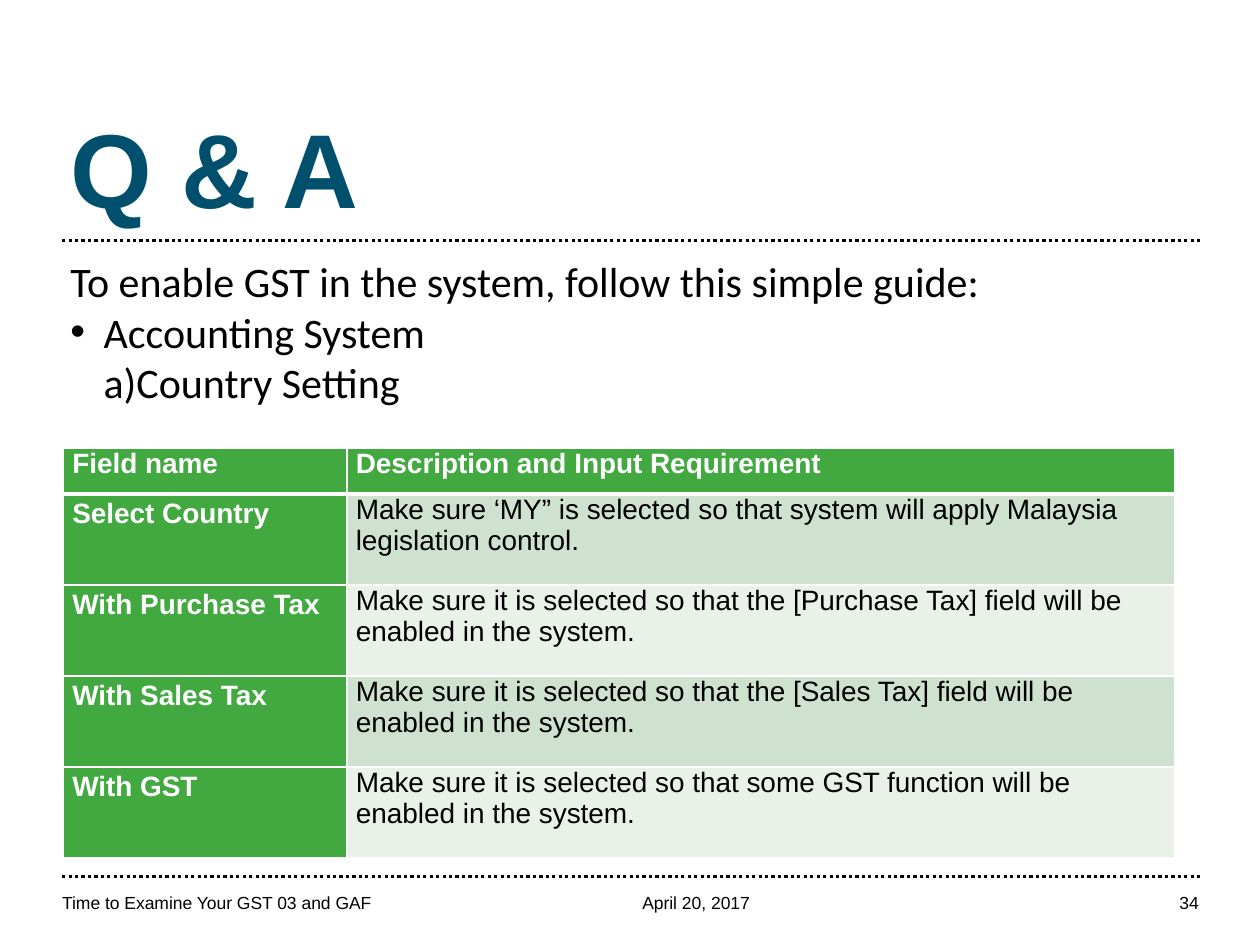
"""Build the Q & A slide on enabling GST in the accounting system."""
from lxml import etree
from pptx import Presentation
from pptx.dml.color import RGBColor
from pptx.enum.dml import MSO_LINE
from pptx.enum.shapes import MSO_CONNECTOR
from pptx.enum.text import MSO_ANCHOR, MSO_AUTO_SIZE, PP_ALIGN
from pptx.oxml import parse_xml
from pptx.oxml.ns import nsdecls, qn
from pptx.util import Pt

LEFT, RIGHT, JUSTIFY = PP_ALIGN.LEFT, PP_ALIGN.RIGHT, PP_ALIGN.JUSTIFY
TOP, BOTTOM = MSO_ANCHOR.TOP, MSO_ANCHOR.BOTTOM
STRAIGHT, DOTTED = MSO_CONNECTOR.STRAIGHT, MSO_LINE.ROUND_DOT
NO_AUTOFIT = MSO_AUTO_SIZE.NONE


def color(hex_code):
    return RGBColor.from_string(hex_code)


def style(paragraph, font_name, size, hex_code, bold=False):
    for run in paragraph.runs:
        run.font.name = font_name
        run.font.size = Pt(size)
        run.font.bold = bold
        run.font.color.rgb = color(hex_code)


prs = Presentation()
prs.slide_width, prs.slide_height = Pt(720), Pt(540)
slide = prs.slides.add_slide(prs.slide_layouts[1])

for y in (137.5, 501):
    rule = slide.shapes.add_connector(STRAIGHT, Pt(35.5), Pt(y), Pt(686), Pt(y))
    rule.line.color.rgb = color("000000")
    rule.line.width = Pt(1.85)
    rule.line.dash_style = DOTTED
    etree.SubElement(rule._element.spPr, qn("a:effectLst"))

title = slide.shapes.title
title.left, title.top, title.width, title.height = Pt(33), Pt(55.5), Pt(197), Pt(80)
title.text_frame.text = "Q & A"
title.text_frame.auto_size = NO_AUTOFIT
title.text_frame.vertical_anchor = TOP
title.text_frame.paragraphs[0].alignment = LEFT
style(title.text_frame.paragraphs[0], "Arial", 60, "00506D", True)

guide = slide.placeholders[1]
guide.left, guide.top, guide.width, guide.height = Pt(33), Pt(142.5), Pt(635), Pt(117)
guide.text_frame.auto_size = NO_AUTOFIT
guide.text_frame.text = (
    "To enable GST in the system, follow this simple guide:\n"
    "Accounting System\n"
    "Country Setting"
)
guide_formats = [
    (0, 0, 0, "<a:buNone {}/>"),
    (0, 19, -19, '<a:buChar {} char="•"/>'),
    (1, 19, 0, '<a:buAutoNum {} type="alphaLcParenR"/>'),
]
for paragraph, (level, margin, indent, bullet) in zip(guide.text_frame.paragraphs, guide_formats):
    paragraph.level = level
    paragraph.alignment = JUSTIFY
    paragraph.space_before = Pt(0)
    properties = paragraph._p.get_or_add_pPr()
    properties.set("marL", str(Pt(margin)))
    properties.set("indent", str(Pt(indent)))
    properties.append(parse_xml(bullet.format(nsdecls("a"))))
    style(paragraph, "Calibri", 24, "000000")

settings = [
    ("Field name", "Description and Input Requirement"),
    ("Select Country", "Make sure ‘MY” is selected so that system will apply Malaysia legislation control."),
    ("With Purchase Tax", "Make sure it is selected so that the [Purchase Tax] field will be enabled in the system."),
    ("With Sales Tax", "Make sure it is selected so that the [Sales Tax] field will be enabled in the system."),
    ("With GST", "Make sure it is selected so that some GST function will be enabled in the system."),
]
table = slide.shapes.add_table(len(settings), 2, Pt(36.3), Pt(256.3), Pt(635), Pt(234)).table
table.columns[0].width, table.columns[1].width = Pt(162), Pt(473)
for r, setting in enumerate(settings):
    table.rows[r].height = Pt(52 if r else 26)
    for c, wording in enumerate(setting):
        cell = table.cell(r, c)
        heading = r == 0 or c == 0
        cell.margin_left = cell.margin_right = Pt(5)
        cell.margin_top = cell.margin_bottom = Pt(0)
        cell.text_frame.text = wording
        paragraph = cell.text_frame.paragraphs[0]
        paragraph.space_after = Pt(2 if heading else 3)
        if r and c == 0:
            paragraph.line_spacing = 1.15
        style(paragraph, "Arial", 16, "FFFFFF" if heading else "000000", heading)
        for side in ("L", "R", "T", "B"):
            thick = (r, side) in ((0, "B"), (1, "T"))
            cell._tc.get_or_add_tcPr().append(parse_xml(
                f'<a:ln{side} {nsdecls("a")} w="{Pt(3 if thick else 1)}"><a:solidFill>'
                f'<a:srgbClr val="FFFFFF"/></a:solidFill></a:ln{side}>'))
        cell.fill.solid()
        cell.fill.fore_color.rgb = color("41A940" if heading else "CFE2CF" if r % 2 else "E9F1E8")

footers = [
    ("Time to Examine Your GST 03 and GAF", 35.5, 317, LEFT),
    ("April 20, 2017", 367, 168, LEFT),
    ("34", 567, 118, RIGHT),
]
for wording, left, width, alignment in footers:
    footer = slide.shapes.add_textbox(Pt(left), Pt(502), Pt(width), Pt(19.5)).text_frame
    footer.margin_left = footer.margin_right = footer.margin_top = footer.margin_bottom = 0
    footer.word_wrap = True
    footer.vertical_anchor = BOTTOM
    footer.text = wording
    footer.paragraphs[0].alignment = alignment
    style(footer.paragraphs[0], "Arial", 10, "000000")

prs.save("out.pptx")
